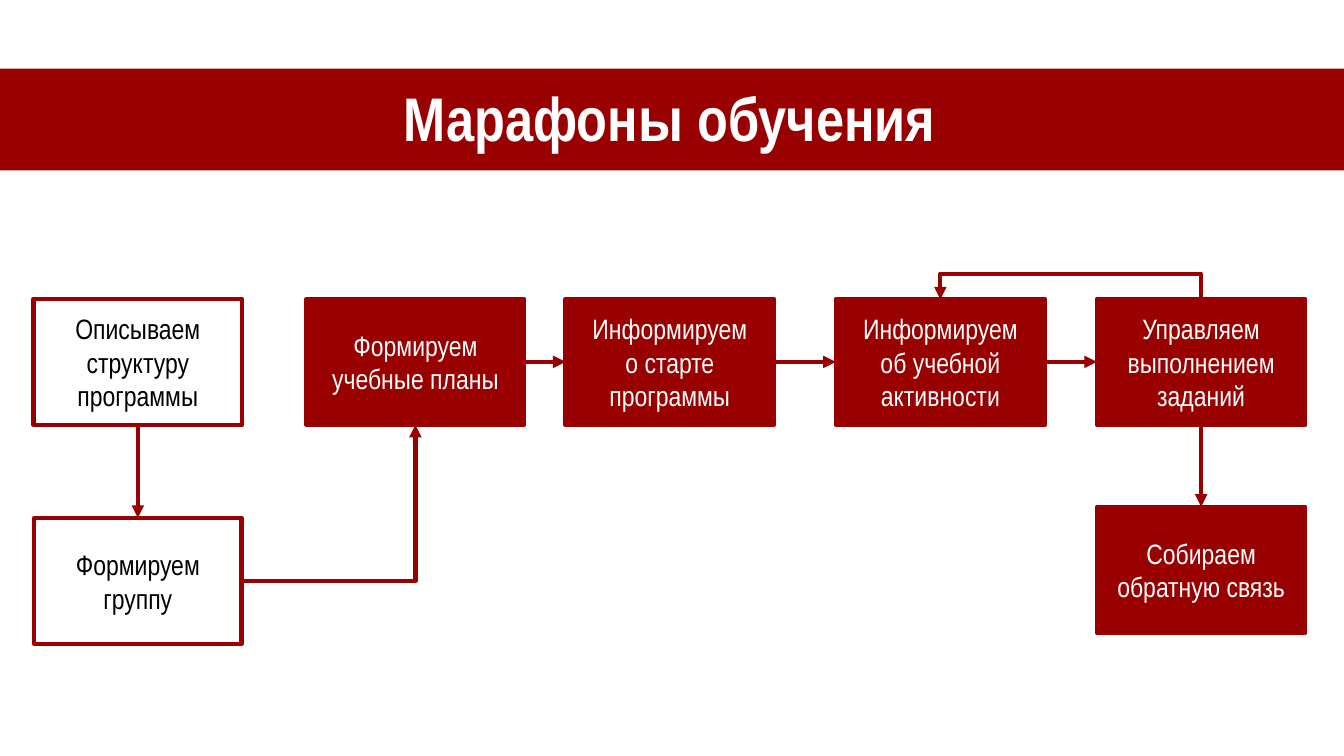
import dataclasses

import lxml.etree
import pptx
import pptx.dml.color
import pptx.enum.shapes
import pptx.enum.text
import pptx.oxml.ns
import pptx.util

Pt = pptx.util.Pt
qn = pptx.oxml.ns.qn
LINKS = pptx.enum.shapes.MSO_CONNECTOR

COLORS = {"red": "990000", "white": "FFFFFF", "black": "000000"}
FONT = "Arial Narrow"
ROW_TOP, STEP_HEIGHT, LINE_WIDTH = 213.5, 90, 3
TOP, LEFT, BOTTOM, RIGHT = range(4)
LOOP_RISE, LOOP_DROP = 18, 0.72


@dataclasses.dataclass
class Step:
    key: str
    lines: list[str]
    left: float
    width: float = 149
    top: float = ROW_TOP
    fill: str | None = "red"
    color: str = "white"


@dataclasses.dataclass
class Arrow:
    start: str
    start_site: int
    end: str
    end_site: int
    corner: bool = False


STEPS = [
    Step("structure", ["Описываем структуру программы"], 24, fill="white", color="black"),
    Step("group", ["Формируем группу"], 24.5, 148, 370, None, "black"),
    Step("plans", ["Формируем учебные планы"], 219, 155.5),
    Step("start", ["Информируем", "о старте программы"], 404),
    Step("activity", ["Информируем", "об учебной активности"], 597, 149.5),
    Step("tasks", ["Управляем выполнением заданий"], 783.5),
    Step("feedback", ["Собираем обратную связь"], 783.5, top=362),
]
ARROWS = [
    Arrow("structure", BOTTOM, "group", TOP),
    Arrow("group", RIGHT, "plans", BOTTOM, corner=True),
    Arrow("plans", RIGHT, "start", LEFT),
    Arrow("start", RIGHT, "activity", LEFT),
    Arrow("activity", RIGHT, "tasks", LEFT),
    Arrow("tasks", BOTTOM, "feedback", TOP),
]


def rgb(name: str) -> pptx.dml.color.RGBColor:
    return pptx.dml.color.RGBColor.from_string(COLORS[name])


def write(sp, lines: list[str], size: float, color: str, bold: bool = False) -> None:
    tf = sp.text_frame
    tf.word_wrap = True
    tf.vertical_anchor = pptx.enum.text.MSO_ANCHOR.MIDDLE
    tf.text = "\n".join(lines)
    for p in tf.paragraphs:
        p.alignment = pptx.enum.text.PP_ALIGN.CENTER
        for r in p.runs:
            r.font.name = FONT
            r.font.size = Pt(size)
            r.font.bold = bold
            r.font.color.rgb = rgb(color)


def add_rect(s, left: float, top: float, width: float, height: float, fill: str | None):
    sp = s.shapes.add_shape(
        pptx.enum.shapes.MSO_SHAPE.RECTANGLE, Pt(left), Pt(top), Pt(width), Pt(height)
    )
    sp.shadow.inherit = False
    if fill:
        sp.fill.solid()
        sp.fill.fore_color.rgb = rgb(fill)
    else:
        sp.fill.background()
    sp.line.fill.background()
    return sp


def add_title(s, text: str) -> None:
    add_rect(s, 0, 49, 960, 72.7, "red")
    sp = s.shapes.add_textbox(Pt(224.6), Pt(34.5), Pt(507.6), Pt(104.4))
    write(sp, [text], 44, "white", bold=True)
    sp.text_frame.paragraphs[0].line_spacing = 0.9


def add_step(s, step: Step):
    sp = add_rect(s, step.left, step.top, step.width, STEP_HEIGHT, step.fill)
    sp.line.color.rgb = rgb("red")
    sp.line.width = Pt(LINE_WIDTH)
    write(sp, step.lines, 20, step.color)
    return sp


def style_arrow(cxn) -> None:
    cxn.line.color.rgb = rgb("red")
    cxn.line.width = Pt(LINE_WIDTH)
    lxml.etree.SubElement(cxn.line._get_or_add_ln(), qn("a:tailEnd"), type="triangle")
    lxml.etree.SubElement(cxn._element.spPr, qn("a:effectLst"))


def add_arrow(s, arrow: Arrow, boxes: dict) -> None:
    kind = LINKS.ELBOW if arrow.corner else LINKS.STRAIGHT
    cxn = s.shapes.add_connector(kind, 0, 0, 0, 0)
    cxn.begin_connect(boxes[arrow.start], arrow.start_site)
    cxn.end_connect(boxes[arrow.end], arrow.end_site)
    if arrow.corner:
        cxn._element.spPr.find(qn("a:prstGeom")).set("prst", "bentConnector2")
    style_arrow(cxn)


def add_loop(s, start, end) -> None:
    x1 = start.left.pt + start.width.pt / 2
    x2 = end.left.pt + end.width.pt / 2
    span = x1 - x2
    left = (x1 + x2 - LOOP_DROP) / 2
    top = ROW_TOP - span / 2
    cxn = s.shapes.add_connector(
        LINKS.ELBOW, Pt(left), Pt(top), Pt(left + LOOP_DROP), Pt(top + span)
    )
    xfrm = cxn._element.spPr.find(qn("a:xfrm"))
    for name, value in (("rot", "16200000"), ("flipH", "1"), ("flipV", "1")):
        xfrm.set(name, value)
    guides = cxn._element.spPr.find(qn("a:prstGeom")).find(qn("a:avLst"))
    bend = round(-LOOP_RISE / LOOP_DROP * 100000)
    lxml.etree.SubElement(guides, qn("a:gd"), name="adj1", fmla=f"val {bend}")
    style_arrow(cxn)


def main() -> None:
    prs = pptx.Presentation()
    prs.slide_width, prs.slide_height = Pt(960), Pt(540)
    s = prs.slides.add_slide(prs.slide_layouts[6])
    add_title(s, "Марафоны обучения")
    boxes = {step.key: add_step(s, step) for step in STEPS}
    for arrow in ARROWS:
        add_arrow(s, arrow, boxes)
    add_loop(s, boxes["tasks"], boxes["activity"])
    prs.save("out.pptx")


if __name__ == "__main__":
    main()
